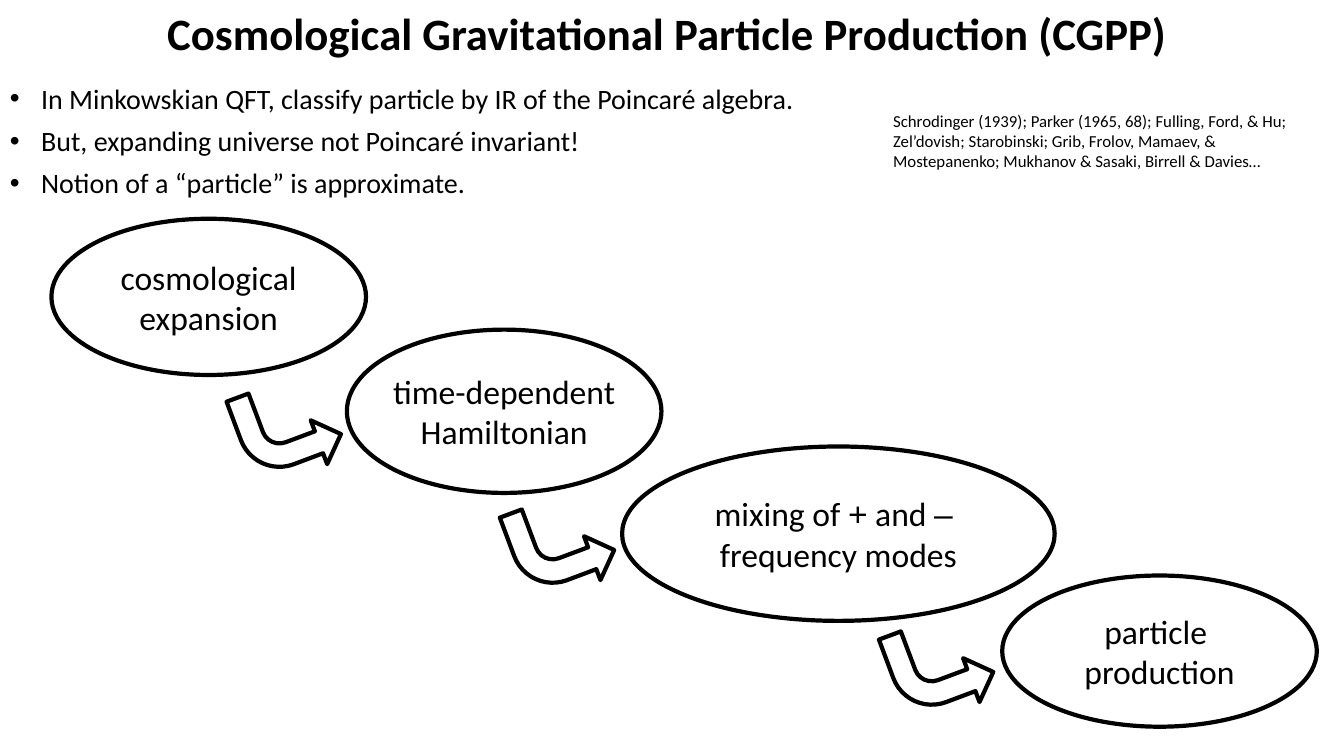
import pptx
import pptx.dml.color
import pptx.enum.shapes
import pptx.enum.text
import pptx.oxml
import pptx.oxml.ns
import pptx.util
from pptx.util import Inches

COLOURS = {"ink": "000000"}
SHAPES = pptx.enum.shapes.MSO_SHAPE
ALIGN = pptx.enum.text.PP_ALIGN
ANCHOR = pptx.enum.text.MSO_ANCHOR

BULLETS = [
    "In Minkowskian QFT, classify particle by IR of the Poincaré algebra.",
    "But, expanding universe not Poincaré invariant!",
    "Notion of a “particle” is approximate.",
]
REFERENCES = (
    "Schrodinger (1939); Parker (1965, 68); Fulling, Ford, & Hu; "
    "Zel’dovish; Starobinski; Grib, Frolov, Mamaev, & Mostepanenko; "
    "Mukhanov & Sasaki, Birrell & Davies…"
)
# Each stage: position and size, then lines made of (text, font) runs
STAGES = [
    ((0.51, 2.17, 3.12, 1.55), [[("cosmological", "Calibri")], [("expansion", "Calibri")]]),
    ((3.44, 3.27, 3.12, 1.62), [[("time-dependent", "Calibri")], [("Hamiltonian", "Calibri")]]),
    ((6.17, 4.43, 4.29, 1.73), [
        [("mixing of ", "Calibri"), ("+", "Arial"), (" and ", "Calibri"), ("– ", "Arial")],
        [("frequency modes", "Calibri")],
    ]),
    ((9.94, 5.71, 3.12, 1.5), [[("particle ", "Calibri")], [("production", "Calibri")]]),
]
ARROW_CORNERS = [(2.38, 3.79), (5.09, 4.94), (8.85, 6.15)]


def ink():
    return pptx.dml.color.RGBColor.from_string(COLOURS["ink"])


def add_bullet(paragraph):
    properties = paragraph._p.get_or_add_pPr()
    properties.set("marL", str(Inches(0.31)))
    properties.set("indent", str(Inches(-0.31)))
    namespace = pptx.oxml.ns.nsdecls("a")
    for element in (f'<a:buFont {namespace} typeface="Arial"/>', f'<a:buChar {namespace} char="•"/>'):
        properties.append(pptx.oxml.parse_xml(element))


def write_lines(text_frame, lines, size, bold=False, bullets=False, **paragraph_format):
    """Write one paragraph per line; a line is a list of (text, font) runs."""
    for index, line in enumerate(lines):
        paragraph = text_frame.paragraphs[0] if index == 0 else text_frame.add_paragraph()
        if bullets:
            add_bullet(paragraph)
        for name, value in paragraph_format.items():
            if index or name != "space_before":
                setattr(paragraph, name, value)
        for text, font_name in line:
            run = paragraph.add_run()
            run.text = text
            font_format = {"name": font_name, "size": pptx.util.Pt(size), "bold": bold}
            for name, value in font_format.items():
                setattr(run.font, name, value)
            run.font.color.rgb = ink()


def add_text(slide, box, texts, size, wrap=False, **text_format):
    text_frame = slide.shapes.add_textbox(*map(Inches, box)).text_frame
    text_frame.word_wrap = wrap
    text_frame.auto_size = pptx.enum.text.MSO_AUTO_SIZE.SHAPE_TO_FIT_TEXT
    write_lines(text_frame, [[(text, "Calibri")] for text in texts], size, **text_format)


def add_outline(slide, kind, box):
    """Add an unfilled preset shape with the heavy outline."""
    shape = slide.shapes.add_shape(kind, *map(Inches, box))
    shape.shadow.inherit = False
    shape.fill.background()
    shape.line.color.rgb = ink()
    shape.line.width = pptx.util.Pt(3)
    return shape


def add_stage(slide, box, lines):
    text_frame = add_outline(slide, SHAPES.OVAL, box).text_frame
    text_frame.word_wrap = False
    text_frame.vertical_anchor = ANCHOR.MIDDLE
    write_lines(text_frame, lines, 24, alignment=ALIGN.CENTER)


def add_step_arrow(slide, left, top):
    arrow = add_outline(slide, SHAPES.BENT_ARROW, (left, top, 0.95, 0.93))
    arrow.rotation = 339.5
    arrow._element.spPr.xfrm.set("flipV", "1")


def main():
    presentation = pptx.Presentation()
    presentation.slide_width = Inches(13.33)
    presentation.slide_height = Inches(7.5)
    slide = presentation.slides.add_slide(presentation.slide_layouts[6])

    title = "Cosmological Gravitational Particle Production (CGPP)"
    add_text(slide, (1.56, 0.01, 10.22, 0.64), [title], 32, bold=True)
    add_text(slide, (0, 0.76, 8.06, 1.28), BULLETS, 20, bullets=True,
             space_before=pptx.util.Pt(6))
    add_text(slide, (8.76, 1.05, 4.3, 0.71), [REFERENCES], 12, wrap=True)
    for box, lines in STAGES:
        add_stage(slide, box, lines)
    for left, top in ARROW_CORNERS:
        add_step_arrow(slide, left, top)

    presentation.save("out.pptx")


if __name__ == "__main__":
    main()
